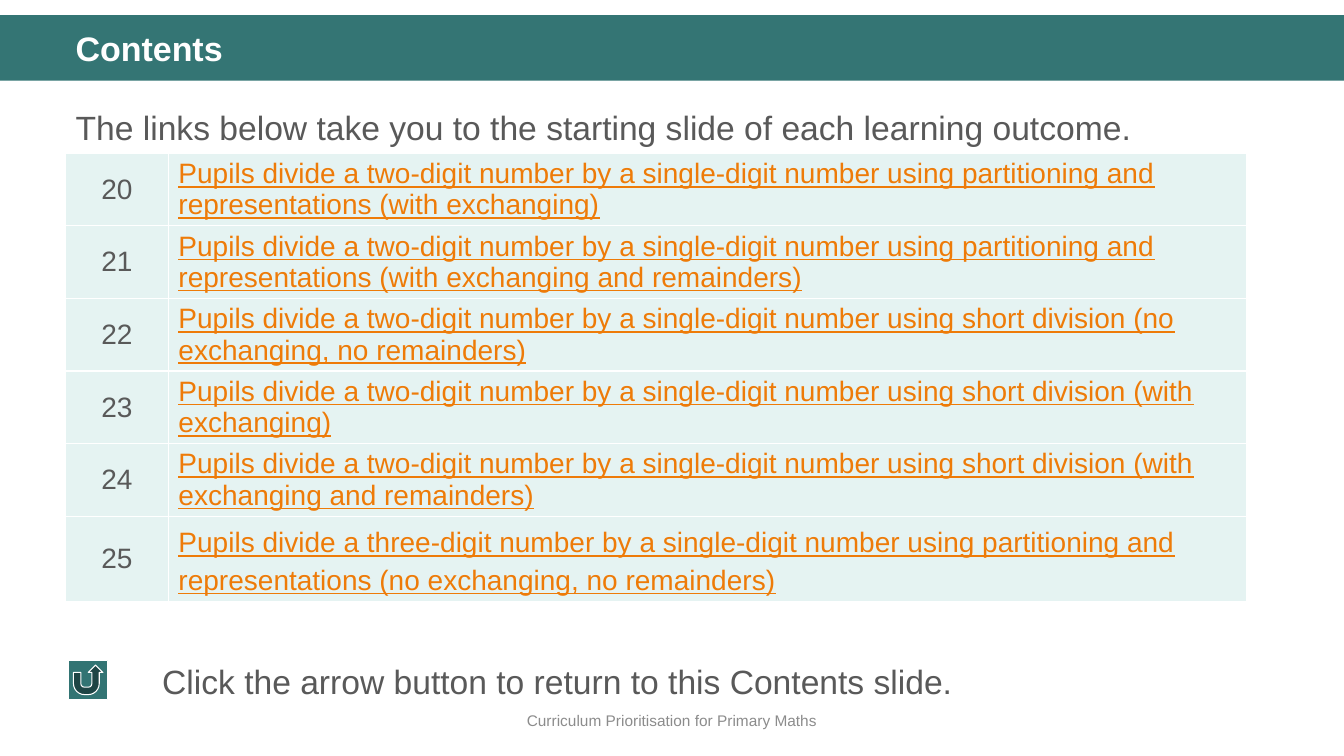
"""Build the Contents slide with its table of learning outcomes."""
from lxml import etree
from pptx import Presentation, util as u
from pptx.dml.color import RGBColor
from pptx.enum import shapes, text

prs = Presentation()
prs.slide_width, prs.slide_height = u.Inches(13.33), u.Inches(7.5)


def box(left, top, width, height):
    """Turn percentages of the slide's size into lengths."""
    w, h = prs.slide_width, prs.slide_height
    return [int(n * side / 100) for n, side in zip((left, top, width, height), (w, h, w, h))]


def write(tf, words, colour, size, align=text.PP_ALIGN.LEFT, spacing=1.0, **font):
    """Fill a text frame with one formatted paragraph."""
    p = tf.paragraphs[0]
    p.alignment, p.line_spacing = align, spacing
    r = p.add_run()
    r.text = words
    r.font.color.rgb = RGBColor.from_string(colour)
    for name, value in {"name": "Arial", "size": u.Pt(size), "bold": False, **font}.items():
        setattr(r.font, name, value)
    return p


s = prs.slides.add_slide(prs.slide_layouts[1])
title, body = s.placeholders
CENTER, MIDDLE = text.PP_ALIGN.CENTER, text.MSO_ANCHOR.MIDDLE

for kind, place, fill, line in (
    (shapes.MSO_SHAPE.RECTANGLE, (0, 2, 100, 8.67), "347574", None),
    (shapes.MSO_SHAPE.ACTION_BUTTON_RETURN, (5.1, 87.33, 2.93, 5.2), "327473", "FFFFFF"),
):
    sp = s.shapes.add_shape(kind, *box(*place))
    sp.shadow.inherit = False
    sp.fill.solid()
    sp.fill.fore_color.rgb = RGBColor.from_string(fill)
    if line:
        sp.line.color.rgb = RGBColor.from_string(line)
        sp.line.width = u.Pt(0.75)
    else:
        sp.line.fill.background()
        s.shapes._spTree.insert(2, sp._element)

footer = s.shapes.add_textbox(*box(0, 92.67, 100, 5.33))
note = s.shapes.add_textbox(*box(11.33, 86.8, 84.92, 6.67))
for sp, place, anchor, words, style in (
    (title, (4.88, 3.6, 91.37, 6.27), MIDDLE, "Contents",
     {"colour": "FFFFFF", "size": 24.3, "spacing": 0.9, "bold": True}),
    (body, (4.88, 12.4, 91.37, 46.8), text.MSO_ANCHOR.TOP,
     "The links below take you to the starting slide of each learning outcome.",
     {"colour": "595959", "size": 24, "spacing": 1.2}),
    (footer, (0, 92.67, 100, 5.33), MIDDLE, "Curriculum Prioritisation for Primary Maths",
     {"colour": "8C8C8C", "size": 11, "align": CENTER}),
    (note, (11.33, 86.8, 84.92, 6.67), text.MSO_ANCHOR.TOP,
     "Click the arrow button to return to this Contents slide.",
     {"colour": "595959", "size": 24}),
):
    sp.left, sp.top, sp.width, sp.height = box(*place)
    tf = sp.text_frame
    tf.word_wrap, tf.auto_size, tf.vertical_anchor = True, text.MSO_AUTO_SIZE.NONE, anchor
    write(tf, words, **style)

p = body.text_frame.paragraphs[0]
p.space_before = u.Pt(10)
pPr = p._p.get_or_add_pPr()
pPr.set("marL", "0")
pPr.set("indent", "0")
etree.SubElement(pPr, "{http://schemas.openxmlformats.org/drawingml/2006/main}buNone")

two_digit = "Pupils divide a two-digit number by a single-digit number using "
outcomes = [
    two_digit + "partitioning and representations (with exchanging)",
    two_digit + "partitioning and representations (with exchanging and remainders)",
    two_digit + "short division (no exchanging, no remainders)",
    two_digit + "short division (with exchanging)",
    two_digit + "short division (with exchanging and remainders)",
    "Pupils divide a three-digit number by a single-digit number using "
    "partitioning and representations (no exchanging, no remainders)",
]
last = len(outcomes) - 1
table = s.shapes.add_table(len(outcomes), 2, *box(4.88, 20.27, 87.9, 59.1)).table
table.horz_banding = False
for column, share in zip(table.columns, (7.65, 80.25)):
    column.width = box(0, 0, share, 0)[2]
for i, outcome in enumerate(outcomes):
    table.rows[i].height = box(0, 0, 0, 11.1 if i == last else 9.6)[3]
    number, link = table.rows[i].cells
    for cell in (number, link):
        cell.vertical_anchor = MIDDLE
        cell.fill.solid()
        cell.fill.fore_color.rgb = RGBColor.from_string("E5F3F2")
    write(number.text_frame, str(20 + i), "595959", 20, CENTER)
    write(link.text_frame, outcome, "EE7B08", 20, spacing=1.2 if i == last else 1.0, underline=True)

prs.save("out.pptx")
